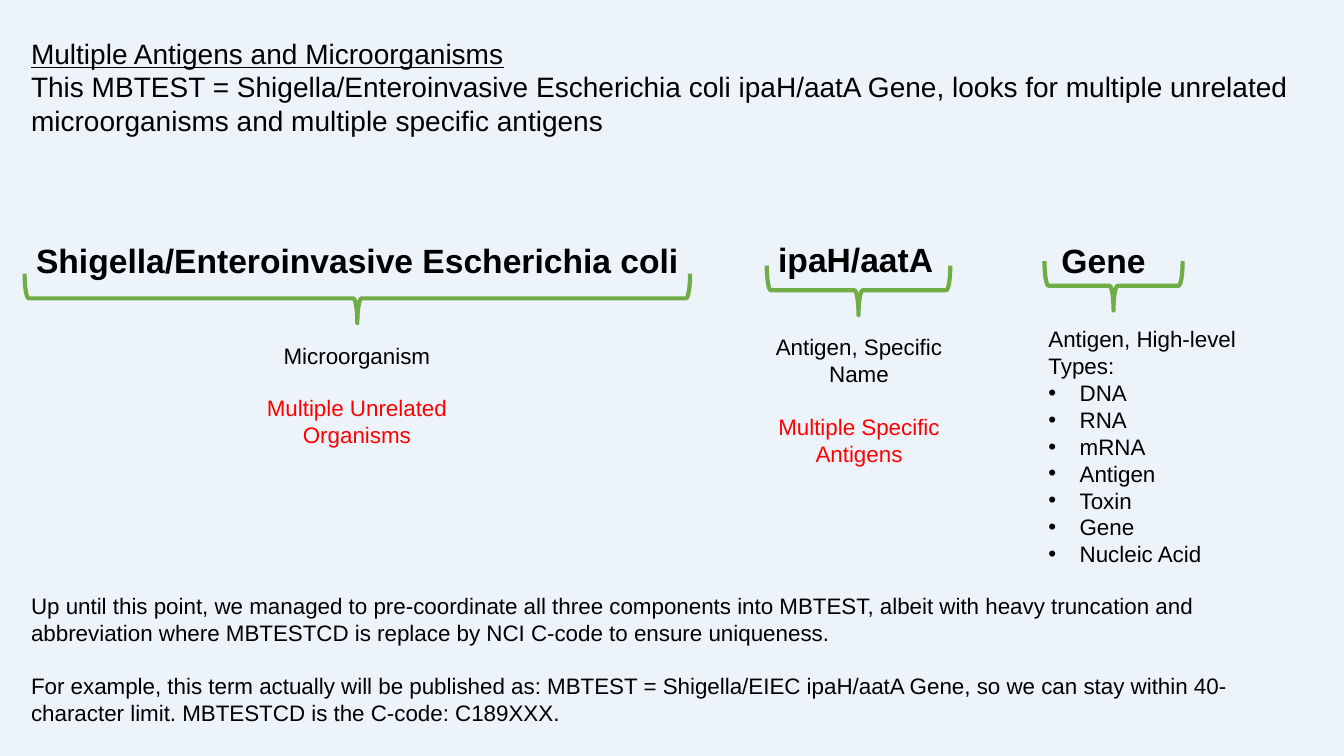
from pptx import Presentation
from pptx.dml.color import RGBColor
from pptx.enum.shapes import MSO_SHAPE as Shape
from pptx.enum.text import MSO_AUTO_SIZE as AutoSize, PP_ALIGN as Align
from pptx.oxml.ns import qn
from pptx.util import Inches, Pt
from lxml import etree

COLORS = {"back": "ECF4FA", "text": "000000", "accent": "FF0000", "brace": "70AD47"}
BLANK_LINE = Pt(18.4)
BRACE_DEPTH = 0.49
BULLET_INDENT = Inches(0.31)

TITLE = [
    ("Multiple Antigens and Microorganisms", {"underline": True}),
    ("This MBTEST = Shigella/Enteroinvasive Escherichia coli ipaH/aatA Gene, looks for "
     "multiple unrelated microorganisms and multiple specific antigens", {}),
]
CLOSING = [
    ("Up until this point, we managed to pre-coordinate all three components into MBTEST, "
     "albeit with heavy truncation and abbreviation where MBTESTCD is replace by NCI C-code "
     "to ensure uniqueness.", {}),
    ("For example, this term actually will be published as: MBTEST = Shigella/EIEC ipaH/aatA "
     "Gene, so we can stay within 40-character limit. MBTESTCD is the C-code: C189XXX.",
     {"space_before": BLANK_LINE}),
]
CENTERED = {"alignment": Align.CENTER}
NOTE = {"alignment": Align.CENTER, "space_before": BLANK_LINE, "color": "accent"}
ANTIGEN_TYPES = ["DNA", "RNA", "mRNA", "Antigen", "Toxin", "Gene", "Nucleic Acid"]

# Each term: heading, its box, brace (left, top, width), explanation, its box
TERMS = [
    ("Shigella/Enteroinvasive Escherichia coli", (0.26, 2.33, 7.14, 0.5), (0.245, 2.715, 6.6),
     [("Microorganism", CENTERED), ("Multiple Unrelated Organisms", NOTE)],
     (2.24, 3.34, 2.6, 1.18)),
    ("ipaH/aatA", (7.62, 2.32, 1.8, 0.5), (7.605, 2.635, 1.82),
     [("Antigen, Specific Name", CENTERED), ("Multiple Specific Antigens", NOTE)],
     (7.37, 3.26, 2.3, 1.45)),
    ("Gene", (10.43, 2.33, 1.37, 0.5), (10.36, 2.59, 1.37),
     [("Antigen, High-level", {}), ("Types:", {})]
     + [(name, {"bullet": True}) for name in ANTIGEN_TYPES],
     (10.3, 3.18, 2.85, 2.52)),
]


class SlideBuilder:
    def __init__(self, page, font="Arial"):
        self.page = page
        self.font = font

    def color(self, name):
        return RGBColor.from_string(COLORS[name])

    def background(self):
        fill = self.page.background.fill
        fill.solid()
        fill.fore_color.rgb = self.color("back")

    def text(self, place, paragraphs, size=16):
        """Add a text box; paragraphs are (wording, format values) pairs."""
        box = self.page.shapes.add_textbox(*map(Inches, place))
        frame = box.text_frame
        frame.word_wrap = True
        frame.auto_size = AutoSize.SHAPE_TO_FIT_TEXT
        for index, (wording, values) in enumerate(paragraphs):
            para = frame.paragraphs[0] if index == 0 else frame.add_paragraph()
            span = para.add_run()
            span.text = wording
            span.font.name = self.font
            span.font.size = Pt(size)
            span.font.color.rgb = self.color(values.get("color", "text"))
            if values.get("bullet"):
                self.bullet(para)
            for key, value in values.items():
                if key in ("bold", "underline"):
                    setattr(span.font, key, value)
                elif key in ("alignment", "space_before"):
                    setattr(para, key, value)

    def bullet(self, para):
        props = para._p.get_or_add_pPr()
        props.set("marL", str(BULLET_INDENT))
        props.set("indent", str(-BULLET_INDENT))
        etree.SubElement(props, qn("a:buFont")).set("typeface", self.font)
        etree.SubElement(props, qn("a:buChar")).set("char", "•")

    def brace(self, left, top, width):
        """Add a brace opening upward, given the place it takes once turned."""
        shift = (width - BRACE_DEPTH) / 2
        place = (left + shift, top - shift, BRACE_DEPTH, width)
        shape = self.page.shapes.add_shape(Shape.LEFT_BRACE, *map(Inches, place))
        shape.rotation = 270
        shape.shadow.inherit = False
        shape.fill.background()
        shape.line.color.rgb = self.color("brace")
        shape.line.width = Pt(3)


def main():
    deck = Presentation()
    deck.slide_width, deck.slide_height = Inches(13.33), Inches(7.5)
    builder = SlideBuilder(deck.slides.add_slide(deck.slide_layouts[6]))
    builder.background()
    builder.text((0.21, 0.31, 12.8, 1.11), TITLE, size=20)
    for heading, heading_place, brace_place, explanation, explanation_place in TERMS:
        builder.text(heading_place, [(heading, {"bold": True})], size=24)
        builder.brace(*brace_place)
        builder.text(explanation_place, explanation)
    builder.text((0.21, 5.83, 12.8, 1.45), CLOSING)
    deck.save("out.pptx")


if __name__ == "__main__":
    main()
